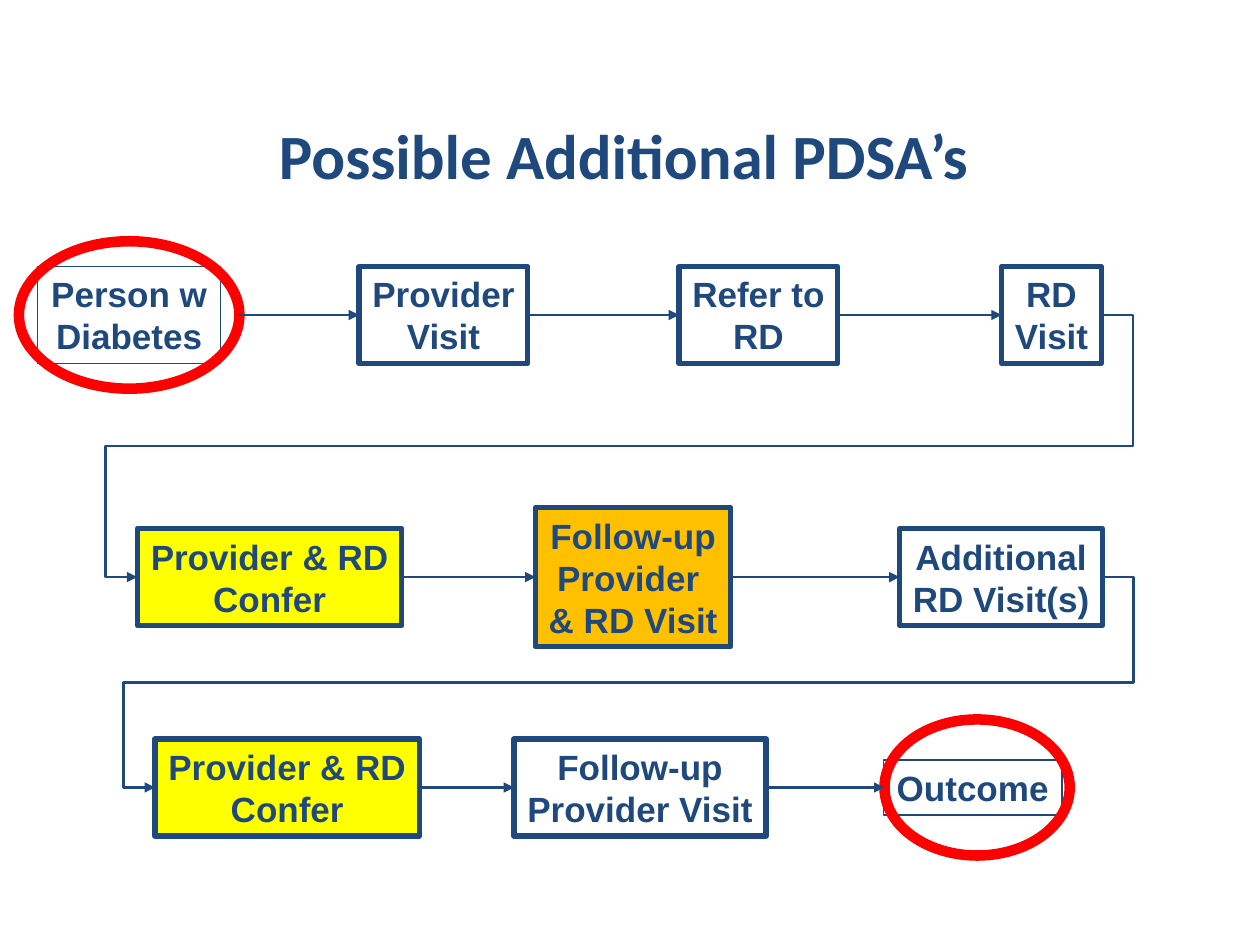
from dataclasses import dataclass

from lxml.etree import SubElement
from pptx import Presentation
from pptx.dml.color import RGBColor as RGB
from pptx.enum.shapes import MSO_CONNECTOR as LINK, MSO_SHAPE as SHAPE
from pptx.enum.text import MSO_ANCHOR as ANCHOR, MSO_AUTO_SIZE as FIT, PP_ALIGN as ALIGN
from pptx.oxml.ns import qn
from pptx.util import Inches, Pt


@dataclass(frozen=True)
class Theme:
    navy = RGB(0x1F, 0x49, 0x7D)
    red = RGB(0xFF, 0, 0)
    yellow = RGB(0xFF, 0xFF, 0)
    orange = RGB(0xFF, 0xC0, 0)
    head_font, head_size = "Calibri", Pt(36)
    step_font, step_size = "Arial", Pt(20)
    thin, link, thick, ring = Pt(0.75), Pt(1.5), Pt(3), Pt(6)


@dataclass(frozen=True)
class Step:
    """One step; left and ring (left, width, height) count from the row's left."""
    text: str
    left: float
    width: float
    fill: RGB = None
    ring: tuple = None


def style(frame, name, size):
    for par in frame.paragraphs:
        par.alignment = ALIGN.CENTER
        for run in par.runs:
            run.font.name, run.font.size = name, size
            run.font.bold = True
            run.font.color.rgb = Theme.navy


def add_title(slide, left, top, width, height):
    title = slide.shapes.title
    title.left, title.top = Inches(left), Inches(top)
    title.width, title.height = Inches(width), Inches(height)
    frame = title.text_frame
    frame.text = "Possible Additional PDSA’s"
    frame.vertical_anchor = ANCHOR.MIDDLE
    style(frame, Theme.head_font, Theme.head_size)


def add_form(slide, kind, left, mid, width, height, color, weight, fill=None):
    """Add an outlined shape centred vertically on mid."""
    form = slide.shapes.add_shape(kind, Inches(left), Inches(mid - height / 2),
                                  Inches(width), Inches(height))
    form.shadow.inherit = False
    form.line.color.rgb, form.line.width = color, weight
    if fill is None:
        form.fill.background()
    else:
        form.fill.solid()
        form.fill.fore_color.rgb = fill
    return form


def add_step(slide, left, mid, step):
    """Draw a step and its ring; return the outer shape that links join."""
    lines = len(step.text.replace("\v", "\n").split("\n"))
    box = add_form(slide, SHAPE.RECTANGLE, left + step.left, mid, step.width,
                   0.1 + 0.335 * lines, Theme.navy,
                   Theme.thin if step.ring else Theme.thick, step.fill)
    frame = box.text_frame
    frame.text = step.text
    frame.word_wrap = False
    frame.auto_size = FIT.SHAPE_TO_FIT_TEXT
    frame.vertical_anchor = ANCHOR.MIDDLE
    style(frame, Theme.step_font, Theme.step_size)
    if not step.ring:
        return box
    shift, width, height = step.ring
    return add_form(slide, SHAPE.OVAL, left + shift, mid, width, height,
                    Theme.red, Theme.ring)


def add_link(slide, kind, start, end, mid, next_mid):
    """Run an arrow from the right of one shape to the left of the next."""
    link = slide.shapes.add_connector(kind, start.left + start.width, Inches(mid),
                                      end.left, Inches(next_mid))
    link.line.color.rgb, link.line.width = Theme.navy, Theme.link
    props = link._element.spPr
    SubElement(props.find(qn("a:ln")), qn("a:tailEnd"), type="triangle")
    SubElement(props, qn("a:effectLst"))
    return link


def add_turn(slide, start, end, mid, next_mid):
    """Lead from the end of one row round to the start of the next."""
    link = add_link(slide, LINK.ELBOW, start, end, mid, next_mid)
    geom = link._element.spPr.find(qn("a:prstGeom"))
    geom.set("prst", "bentConnector5")
    guides = geom.find(qn("a:avLst"))
    if guides is None:
        guides = SubElement(geom, qn("a:avLst"))
    for place, value in enumerate((-3300, 50000, 103300), 1):
        SubElement(guides, qn("a:gd"), name=f"adj{place}", fmla=f"val {value}")


def add_row(slide, left, mid, steps):
    """Draw a row of linked steps; return its first and last shape."""
    forms = [add_step(slide, left, mid, step) for step in steps]
    for start, end in zip(forms, forms[1:]):
        add_link(slide, LINK.STRAIGHT, start, end, mid, mid)
    return forms[0], forms[-1]


CONFER = Step("Provider & RD\nConfer", 0, 2.1, Theme.yellow)
ROWS = [
    (0.3, 2.5, [
        Step("Person w\vDiabetes", 0, 1.45, ring=(-0.15, 1.75, 1.17)),
        Step("Provider\nVisit", 2.55, 1.34),
        Step("Refer to\vRD", 5.09, 1.26),
        Step("RD\nVisit", 7.65, 0.79)]),
    (1.09, 4.58, [
        CONFER,
        Step("Follow-up\nProvider \n& RD Visit", 3.16, 1.55, Theme.orange),
        Step("Additional\nRD Visit(s)", 6.05, 1.61)]),
    (1.23, 6.25, [
        CONFER,
        Step("Follow-up\nProvider Visit", 2.85, 2),
        Step("Outcome", 5.78, 1.42, ring=(5.79, 1.47, 1.08))]),
]


def main():
    deck = Presentation()
    deck.slide_width, deck.slide_height = Inches(10), Inches(7.5)
    slide = deck.slides.add_slide(deck.slide_layouts[5])
    add_title(slide, 1.06, 0.85, 7.78, 0.75)
    last = last_mid = None
    for left, mid, steps in ROWS:
        first, end = add_row(slide, left, mid, steps)
        if last is not None:
            add_turn(slide, last, first, last_mid, mid)
        last, last_mid = end, mid
    deck.save("out.pptx")


if __name__ == "__main__":
    main()
